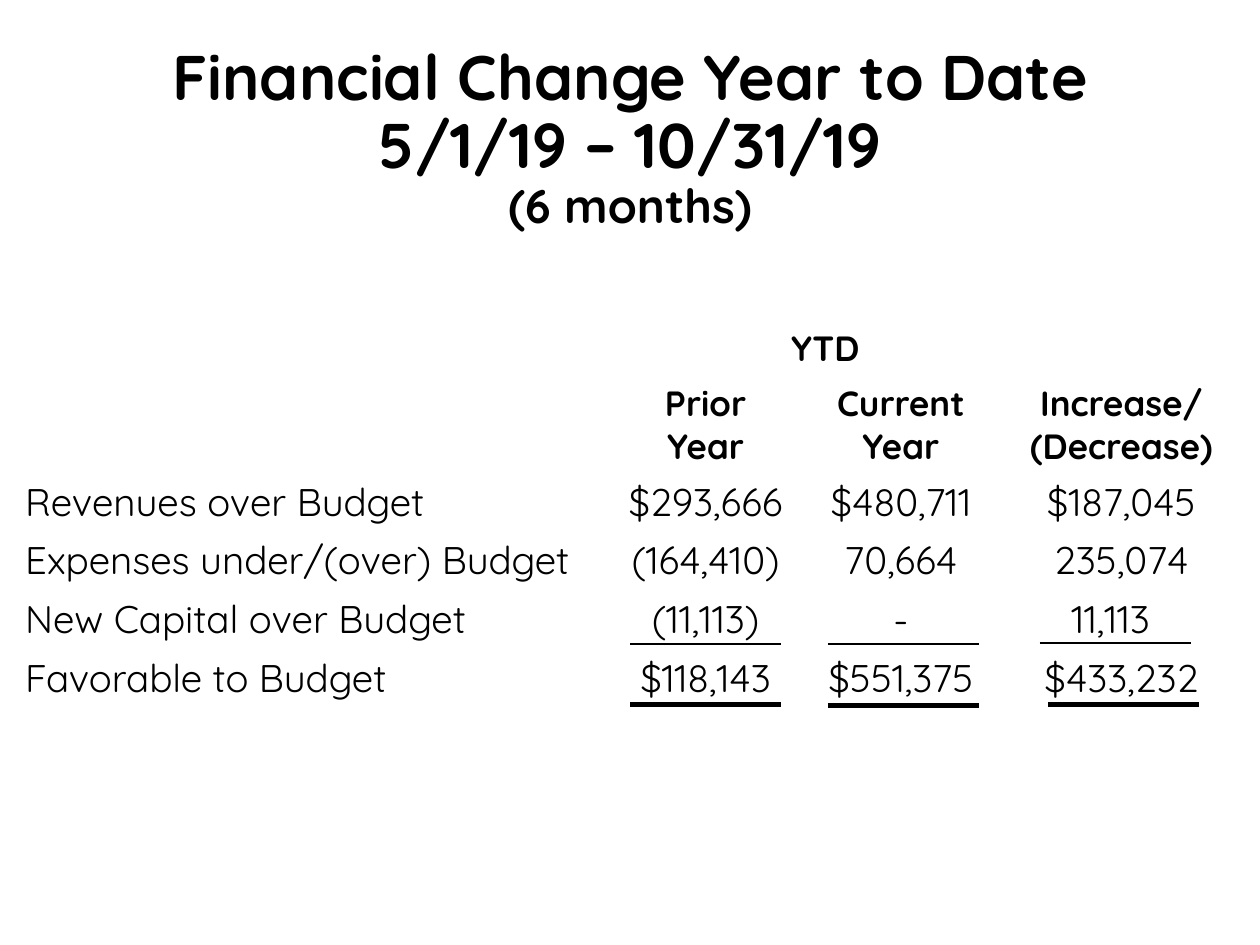
import pptx
import pptx.dml.color
import pptx.enum.shapes
import pptx.enum.text
import pptx.oxml.ns
import pptx.util
from lxml import etree

Inches = pptx.util.Inches
ALIGN = pptx.enum.text.PP_ALIGN
ANCHOR = pptx.enum.text.MSO_ANCHOR

SLIDE_WIDTH, SLIDE_HEIGHT = Inches(10), Inches(7.5)
BLACK, WHITE = "000000", "FFFFFF"

TITLE = {"size": pptx.util.Pt(36), "bold": True}
SUBTITLE = {"size": pptx.util.Pt(27), "bold": True}
HEADING = {"size": pptx.util.Pt(20), "bold": True}
BODY = {"size": pptx.util.Pt(22), "bold": False}

COLUMN_WIDTHS = [4.7, 1.6, 1.5, 0.4, 1.6]
ROW_HEIGHT = 0.41
ROWS = [
    ["", "YTD", "", "", ""],
    ["", "Prior\nYear", "Current Year", "Increase/ (Decrease)"],
    ["Revenues over Budget", "$293,666", "$480,711", "$187,045"],
    ["Expenses under/(over) Budget", "(164,410)", "70,664", "235,074"],
    ["New Capital over Budget", "(11,113)", "-", "11,113"],
    ["Favorable to Budget", "$118,143", "$551,375", "$433,232"],
    ["", "", "", ""],
]
HEADING_ROWS = 2
CAPITAL_ROW, CHANGE_COLUMN = 4, 3

RULE_LENGTH = 1.2
SUBTOTAL_RULES = [(5, 5.11), (6.57, 5.11), (8.25, 5.1)]
TOTAL_RULES = [(5, 5.59), (6.57, 5.6), (8.32, 5.59)]


def color(hex_value):
    return pptx.dml.color.RGBColor.from_string(hex_value)


def apply_format(font, style):
    for attribute, value in {"name": "Quicksand", **style}.items():
        setattr(font, attribute, value)
    font.color.rgb = color(BLACK)


def add_title(slide):
    box = slide.shapes.add_textbox(
        int(SLIDE_WIDTH * 0.06), int(SLIDE_HEIGHT * 0.028),
        int(SLIDE_WIDTH * 0.88), int(SLIDE_HEIGHT * 0.24))
    frame = box.text_frame
    frame.word_wrap = True
    frame.vertical_anchor = ANCHOR.MIDDLE
    heading = frame.paragraphs[0]
    heading.alignment = ALIGN.CENTER
    heading.line_spacing = 0.9
    lines = [("Financial Change Year to Date", TITLE),
             ("5/1/19 – 10/31/19", TITLE),
             ("(6 months)", SUBTITLE)]
    for index, (words, style) in enumerate(lines):
        if index:
            heading.add_line_break()
        run = heading.add_run()
        run.text = words
        apply_format(run.font, style)


def fill_cell(cell, words, style, alignment):
    cell.fill.solid()
    cell.fill.fore_color.rgb = color(WHITE)
    cell.text = words
    for paragraph in cell.text_frame.paragraphs:
        paragraph.alignment = alignment
        for run in paragraph.runs:
            apply_format(run.font, style)


def add_budget_table(slide):
    table = slide.shapes.add_table(
        len(ROWS), len(COLUMN_WIDTHS), Inches(0.1), Inches(2.54),
        Inches(sum(COLUMN_WIDTHS)), Inches(ROW_HEIGHT * len(ROWS))).table
    table.horz_banding = False
    for column, width in zip(table.columns, COLUMN_WIDTHS):
        column.width = Inches(width)
    for r, values in enumerate(ROWS):
        table.rows[r].height = Inches(ROW_HEIGHT)
        style = HEADING if r < HEADING_ROWS else BODY
        for c, words in enumerate(values):
            fill_cell(table.cell(r, c), words, style,
                      ALIGN.CENTER if c else ALIGN.LEFT)
        if r:
            table.cell(r, 3).merge(table.cell(r, 4))
    table.cell(0, 1).merge(table.cell(0, 3))
    table.cell(CAPITAL_ROW, CHANGE_COLUMN).margin_right = Inches(0.27)


def add_rule(slide, left, top, weight):
    rule = slide.shapes.add_connector(
        pptx.enum.shapes.MSO_CONNECTOR.STRAIGHT, Inches(left), Inches(top),
        Inches(left + RULE_LENGTH), Inches(top))
    rule.line.color.rgb = color(BLACK)
    rule.line.width = pptx.util.Pt(weight)
    etree.SubElement(rule._element.spPr, pptx.oxml.ns.qn("a:effectLst"))


def main():
    deck = pptx.Presentation()
    deck.slide_width, deck.slide_height = SLIDE_WIDTH, SLIDE_HEIGHT
    slide = deck.slides.add_slide(deck.slide_layouts[6])
    add_title(slide)
    add_budget_table(slide)
    for rules, weight in ((SUBTOTAL_RULES, 1.25), (TOTAL_RULES, 3)):
        for left, top in rules:
            add_rule(slide, left, top, weight)
    deck.save("out.pptx")


if __name__ == "__main__":
    main()
